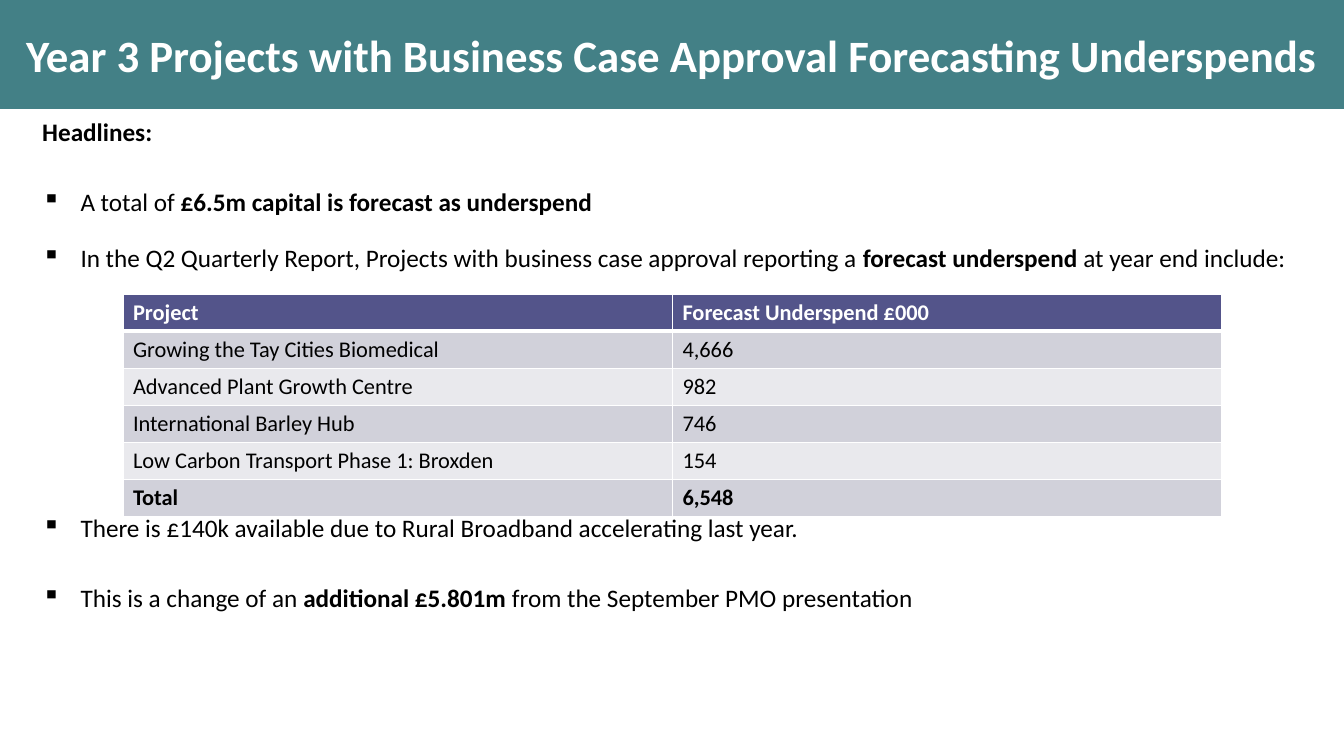
from dataclasses import dataclass
from lxml.etree import SubElement
from pptx import Presentation
from pptx.dml.color import RGBColor
from pptx.enum.shapes import MSO_SHAPE
from pptx.enum.text import MSO_ANCHOR, PP_ALIGN
from pptx.oxml.ns import qn
from pptx.util import Inches, Pt


@dataclass(frozen=True)
class Theme:
    """Colours, font and type sizes of the slide."""
    font: str = "Calibri"
    teal: str = "438086"
    head: str = "53548A"
    bands: tuple = ("D1D1DA", "E9E9ED")
    white: str = "FFFFFF"
    black: str = "000000"
    title: int = 32
    body: int = 18
    cell: int = 16


THEME = Theme()
WIDE, HIGH = Inches(13.33), Inches(7.5)
TITLE = "Year 3 Projects with Business Case Approval Forecasting Underspends"
POINTS = [
    (0, False, [("Headlines:", True)]),
    (28.7, True, [("A total of ", False),
                  ("£6.5m capital is forecast as underspend", True)]),
    (18.7, True, [("In the Q2 Quarterly Report, Projects with business case "
                   "approval reporting a ", False),
                  ("forecast underspend", True),
                  (" at year end include:", False)]),
    (170.9, True, [("There is £140k available due to Rural Broadband "
                    "accelerating last year.", False)]),
    (28.7, True, [("This is a change of an ", False),
                  ("additional £5.801m ", True),
                  ("from the September PMO presentation", False)]),
]
ROWS = [
    ("Project", "Forecast Underspend £000"),
    ("Growing the Tay Cities Biomedical", "4,666"),
    ("Advanced Plant Growth Centre", "982"),
    ("International Barley Hub", "746"),
    ("Low Carbon Transport Phase 1: Broxden", "154"),
    ("Total", "6,548"),
]


def area(left, top, width, height):
    """Turn percent shares of the slide into a box."""
    return (int(WIDE * left / 100), int(HIGH * top / 100),
            int(WIDE * width / 100), int(HIGH * height / 100))


def style(font, size, color):
    """Set the family, size and colour of a font."""
    font.name, font.size = THEME.font, Pt(size)
    font.color.rgb = RGBColor.from_string(color)


def paint(fill, color):
    """Give a fill one solid colour."""
    fill.solid()
    fill.fore_color.rgb = RGBColor.from_string(color)


def banner(slide, box):
    """Draw the title band."""
    band = slide.shapes.add_shape(MSO_SHAPE.RECTANGLE, *box)
    band.shadow.inherit = False
    paint(band.fill, THEME.teal)
    band.line.fill.background()
    frame = band.text_frame
    frame.word_wrap = True
    frame.vertical_anchor = MSO_ANCHOR.MIDDLE
    para = frame.paragraphs[0]
    para.text, para.alignment = TITLE, PP_ALIGN.CENTER
    style(para.font, THEME.title, THEME.white)
    para.font.bold = True


def bullet(para):
    """Add a hanging square bullet to a paragraph."""
    props = para._p.get_or_add_pPr()
    props.set("marL", str(Inches(0.38)))
    props.set("indent", str(-Inches(0.38)))
    SubElement(props, qn("a:buChar"), char="▪")


def points(slide, box):
    """Write the headline list, leaving a gap for the table."""
    frame = slide.shapes.add_textbox(*box).text_frame
    frame.word_wrap = True
    for i, (gap, mark, parts) in enumerate(POINTS):
        para = frame.add_paragraph() if i else frame.paragraphs[0]
        if gap:
            para.space_before = Pt(gap)
        if mark:
            bullet(para)
        style(para.font, THEME.body, THEME.black)
        for text, bold in parts:
            run = para.add_run()
            run.text, run.font.bold = text, bold


def border(cell, base):
    """Draw white lines round a cell, with the given top and bottom widths."""
    props = cell._tc.get_or_add_tcPr()
    for side, width in zip("LRTB", (1, 1, *base)):
        line = SubElement(props, qn(f"a:ln{side}"), w=str(Pt(width)))
        solid = SubElement(line, qn("a:solidFill"))
        SubElement(solid, qn("a:srgbClr"), val=THEME.white)


def grid(slide, box):
    """Build the table of forecast underspends."""
    table = slide.shapes.add_table(len(ROWS), len(ROWS[0]), *box).table
    for r, row in enumerate(ROWS):
        for c, text in enumerate(row):
            cell = table.cell(r, c)
            border(cell, (3 if r == 1 else 1, 1 if r else 3))
            paint(cell.fill, THEME.bands[(r - 1) % 2] if r else THEME.head)
            para = cell.text_frame.paragraphs[0]
            para.text = text
            style(para.font, THEME.cell, THEME.black if r else THEME.white)
            para.font.bold = r in (0, len(ROWS) - 1)


def main():
    """Build and save the slide."""
    deck = Presentation()
    deck.slide_width, deck.slide_height = WIDE, HIGH
    slide = deck.slides.add_slide(deck.slide_layouts[6])
    banner(slide, area(0, 0, 100, 14.4))
    points(slide, area(2.4, 14.67, 95.72, 79.47))
    grid(slide, area(9.15, 38.93, 81.77, 29.4))
    deck.save("out.pptx")


if __name__ == "__main__":
    main()
